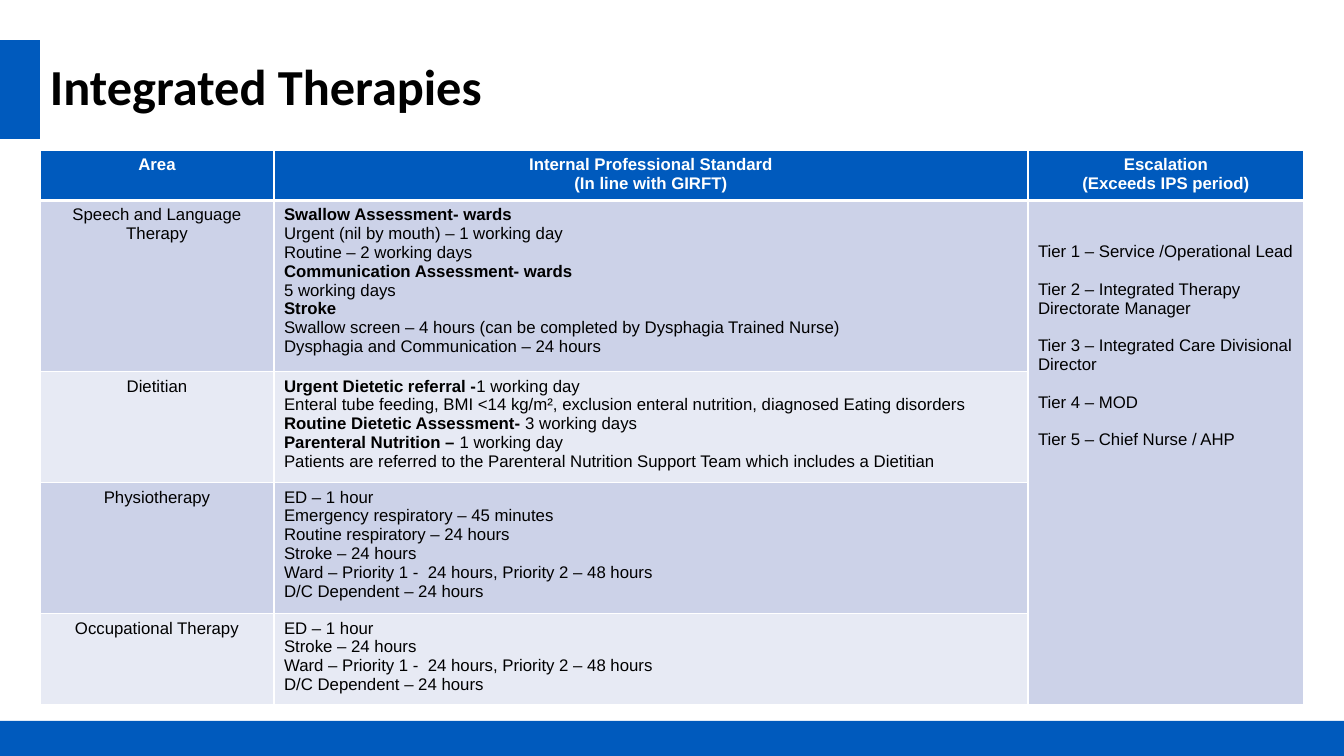
from dataclasses import dataclass

from lxml import etree
from pptx import Presentation
from pptx.dml.color import RGBColor
from pptx.enum.shapes import MSO_SHAPE
from pptx.enum.text import MSO_ANCHOR, PP_ALIGN
from pptx.oxml.ns import qn
from pptx.util import Emu, Pt

RECTANGLE = MSO_SHAPE.RECTANGLE
MIDDLE = MSO_ANCHOR.MIDDLE
LEFT, CENTER = PP_ALIGN.LEFT, PP_ALIGN.CENTER

SLIDE_WIDTH, SLIDE_HEIGHT = 1344, 756
EMU_PER_PX = 12192000 / SLIDE_WIDTH


@dataclass(frozen=True)
class Theme:
    blue: str = "005ABD"
    band_dark: str = "CCD2E8"
    band_light: str = "E7EAF4"
    white: str = "FFFFFF"
    black: str = "000000"
    title_font: str = "Calibri"
    body_font: str = "Arial"
    title_size: int = 36
    body_size: int = 12
    tier_gap: float = 13.4
    thin_border: int = 1
    thick_border: int = 3


THEME = Theme()

# Table content: each line is a (bold, regular) pair
COLUMN_WIDTHS = [234, 754, 276]
ROW_HEIGHTS = [47, 161, 104, 123, 85]
HEADERS = [
    [("Area", "")],
    [("Internal Professional Standard", ""), ("(In line with GIRFT)", "")],
    [("Escalation", ""), ("(Exceeds IPS period)", "")],
]
WARD_LINES = [
    ("", "Stroke – 24 hours"),
    ("", "Ward – Priority 1 -  24 hours, Priority 2 – 48 hours"),
    ("", "D/C Dependent – 24 hours"),
]
AREAS = [
    ([("", "Speech and Language"), ("", "Therapy")], [
        ("Swallow Assessment- wards", ""),
        ("", "Urgent (nil by mouth) – 1 working day"),
        ("", "Routine – 2 working days"),
        ("Communication Assessment- wards", ""),
        ("", "5 working days"),
        ("Stroke", ""),
        ("", "Swallow screen – 4 hours (can be completed by Dysphagia Trained Nurse)"),
        ("", "Dysphagia and Communication – 24 hours"),
    ]),
    ([("", "Dietitian")], [
        ("Urgent Dietetic referral -", "1 working day"),
        ("", "Enteral tube feeding, BMI <14 kg/m², exclusion enteral nutrition, "
             "diagnosed Eating disorders"),
        ("Routine Dietetic Assessment- ", "3 working days"),
        ("Parenteral Nutrition – ", "1 working day"),
        ("", "Patients are referred to the Parenteral Nutrition Support Team "
             "which includes a Dietitian"),
    ]),
    ([("", "Physiotherapy")], [
        ("", "ED – 1 hour"),
        ("", "Emergency respiratory – 45 minutes"),
        ("", "Routine respiratory – 24 hours"),
        *WARD_LINES,
    ]),
    ([("", "Occupational Therapy")], [("", "ED – 1 hour"), *WARD_LINES]),
]
TIERS = [
    ("", "Tier 1 – Service /Operational Lead"),
    ("", "Tier 2 – Integrated Therapy Directorate Manager"),
    ("", "Tier 3 – Integrated Care Divisional Director"),
    ("", "Tier 4 – MOD"),
    ("", "Tier 5 – Chief Nurse / AHP"),
]


def px(length):
    return Emu(round(length * EMU_PER_PX))


def add_run(para, text, font, size, color, bold):
    span = para.add_run()
    span.text = text
    span.font.name = font
    span.font.size = Pt(size)
    span.font.bold = bold
    span.font.color.rgb = RGBColor.from_string(color)


def add_bar(page, left, top, width, height):
    bar = page.shapes.add_shape(RECTANGLE, px(left), px(top), px(width), px(height))
    bar.shadow.inherit = False
    bar.fill.solid()
    bar.fill.fore_color.rgb = RGBColor.from_string(THEME.blue)
    bar.line.fill.background()


def add_title(page, text, left, top, width, height):
    box = page.shapes.add_textbox(px(left), px(top), px(width), px(height))
    frame = box.text_frame
    frame.word_wrap = True
    frame.vertical_anchor = MIDDLE
    para = frame.paragraphs[0]
    para.line_spacing = 0.9
    add_run(para, text, THEME.title_font, THEME.title_size, THEME.black, True)


def set_borders(cell, bottom_width):
    properties = cell._tc.get_or_add_tcPr()
    thin = THEME.thin_border
    for side, width in (("L", thin), ("R", thin), ("T", thin), ("B", bottom_width)):
        line = etree.SubElement(properties, qn(f"a:ln{side}"), w=str(Pt(width)))
        fill = etree.SubElement(line, qn("a:solidFill"))
        etree.SubElement(fill, qn("a:srgbClr"), val=THEME.white)


def style_cell(cell, fill, bottom_width=THEME.thin_border):
    set_borders(cell, bottom_width)
    cell.fill.solid()
    cell.fill.fore_color.rgb = RGBColor.from_string(fill)


def write_cell(cell, lines, align=LEFT, color=THEME.black, gap=0):
    frame = cell.text_frame
    for index, (bold_text, regular_text) in enumerate(lines):
        para = frame.add_paragraph() if index else frame.paragraphs[0]
        para.alignment = align
        if index and gap:
            para.space_before = Pt(gap)
        for text, bold in ((bold_text, True), (regular_text, False)):
            if text:
                add_run(para, text, THEME.body_font, THEME.body_size, color, bold)


def add_standards_table(page, left, top):
    frame = page.shapes.add_table(
        len(ROW_HEIGHTS), len(COLUMN_WIDTHS), px(left), px(top),
        px(sum(COLUMN_WIDTHS)), px(sum(ROW_HEIGHTS)))
    table = frame.table
    for column, width in zip(table.columns, COLUMN_WIDTHS):
        column.width = px(width)
    for row, height in zip(table.rows, ROW_HEIGHTS):
        row.height = px(height)

    # Header row
    for column, lines in enumerate(HEADERS):
        cell = table.cell(0, column)
        style_cell(cell, THEME.blue, THEME.thick_border)
        write_cell(cell, lines, CENTER, THEME.white)

    # Areas and their standards, in alternating bands
    for row, (area, standards) in enumerate(AREAS, start=1):
        band = THEME.band_dark if row % 2 else THEME.band_light
        for column in (0, 1):
            style_cell(table.cell(row, column), band)
        style_cell(table.cell(row, 2), THEME.band_dark)
        write_cell(table.cell(row, 0), area, CENTER)
        write_cell(table.cell(row, 1), standards)

    # Escalation tiers, one cell beside all the areas
    escalation = table.cell(1, 2)
    escalation.merge(table.cell(len(AREAS), 2))
    escalation.margin_top = px(42)
    write_cell(escalation, TIERS, gap=THEME.tier_gap)


def main():
    deck = Presentation()
    deck.slide_width, deck.slide_height = px(SLIDE_WIDTH), px(SLIDE_HEIGHT)
    page = deck.slides.add_slide(deck.slide_layouts[6])

    # Title accent and footer band
    add_bar(page, 0, 40, 40, 99)
    add_bar(page, 0, 721, SLIDE_WIDTH, 35)

    add_title(page, "Integrated Therapies", 40, 40, 1086, 99)
    add_standards_table(page, 40, 150)
    deck.save("out.pptx")


if __name__ == "__main__":
    main()
